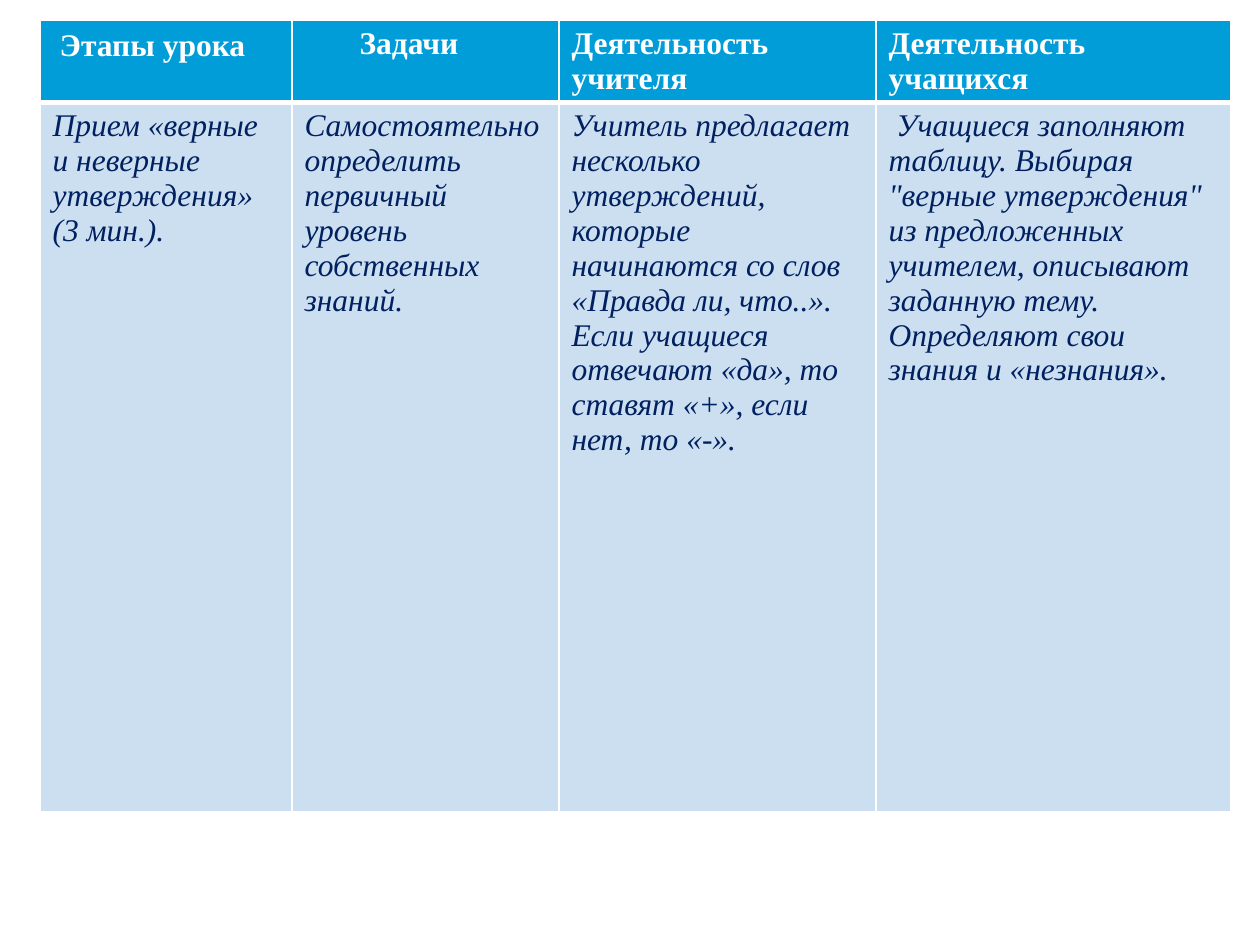
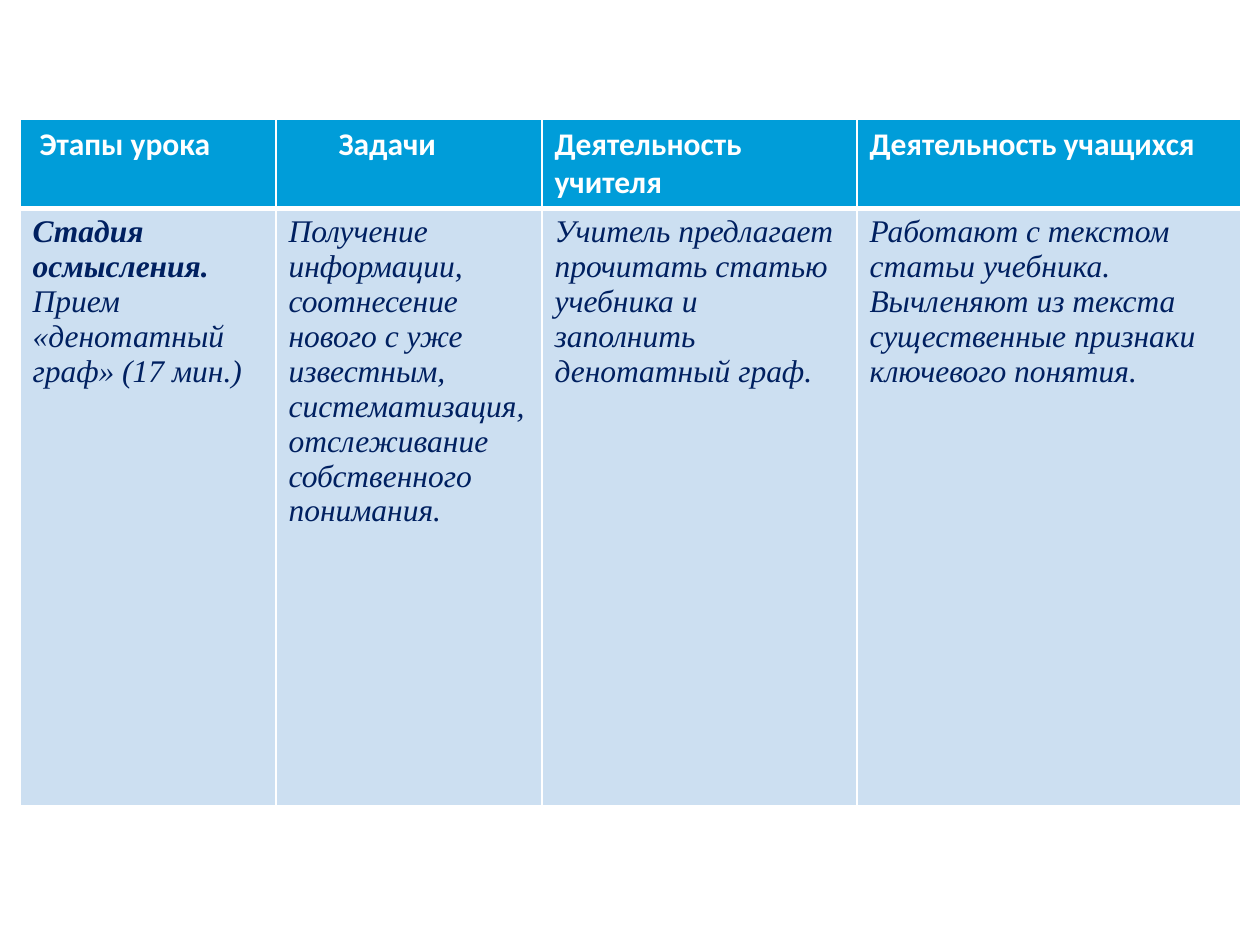
from lxml.etree import SubElement
from pptx import Presentation
from pptx.dml.color import RGBColor as Rgb
from pptx.oxml.ns import qn
from pptx.util import Emu, Pt

SCALE = 914400 / 126
COLORS = {"header": "009DD9", "body": "CCDFF1", "text": "002060", "white": "FFFFFF"}
SERIF, SANS = "Times New Roman", "Calibri"
HEADERS = ["Этапы урока", "Задачи", "Деятельность учителя", "Деятельность учащихся"]


def px(value):
    return Emu(round(value * SCALE))


class Deck:
    text_size = Pt(18)

    def __init__(self):
        self.presentation = Presentation()
        self.presentation.slide_width = px(1260)
        self.presentation.slide_height = px(945)
        self.slide = None

    def add_slide(self):
        self.slide = self.presentation.slides.add_slide(self.presentation.slide_layouts[6])

    def style_paragraph(self, paragraph, font_name, color, bold, italic):
        font = paragraph.font
        font.name, font.size = font_name, self.text_size
        font.bold, font.italic = bold, italic
        font.color.rgb = Rgb.from_string(COLORS[color])

    def style_cell(self, cell, fill, bottom_width):
        properties = cell._tc.get_or_add_tcPr()
        for side in "LRTB":
            width = bottom_width if side == "B" else 1
            line = SubElement(properties, qn(f"a:ln{side}"), w=str(Pt(width)))
            solid = SubElement(line, qn("a:solidFill"))
            SubElement(solid, qn("a:srgbClr"), val=COLORS["white"])
        cell.fill.solid()
        cell.fill.fore_color.rgb = Rgb.from_string(COLORS[fill])

    def header_cell(self, cell, text, font_name, indent):
        self.style_cell(cell, "header", 3)
        paragraph = cell.text_frame.paragraphs[0]
        if text == HEADERS[0]:
            lead = paragraph.add_run()
            lead.text = " "
            lead.font.name = SANS
        paragraph.add_run().text = text
        if text == HEADERS[1]:
            paragraph._p.get_or_add_pPr().set("indent", str(px(indent)))
        self.style_paragraph(paragraph, font_name, "white", True, False)

    def body_cell(self, cell, text, bold_title):
        self.style_cell(cell, "body", 1)
        cell.text = text
        for index, paragraph in enumerate(cell.text_frame.paragraphs):
            self.style_paragraph(paragraph, SERIF, "text", bold_title and index == 0, True)

    def lesson_table(self, left, top, widths, heights, header_font, indent, texts,
                     bold_title=False):
        frame = self.slide.shapes.add_table(
            2, len(widths), px(left), px(top), px(sum(widths)), px(sum(heights)))
        table = frame.table
        table.first_row = table.horz_banding = False
        for row, height in zip(table.rows, heights):
            row.height = px(height)
        for index, width in enumerate(widths):
            table.columns[index].width = px(width)
            self.header_cell(table.cell(0, index), HEADERS[index], header_font, indent)
            self.body_cell(table.cell(1, index), texts[index], bold_title and index == 0)


def main():
    deck = Deck()
    deck.add_slide()
    deck.lesson_table(40, 20, [252, 267, 317, 355], [82, 709], SERIF, 55, [
        "Прием «верные и неверные утверждения»\n(3 мин.).",
        "Самостоятельно определить первичный уровень собственных знаний.",
        "Учитель предлагает несколько утверждений, которые начинаются со слов "
        "«Правда ли, что..». Если учащиеся отвечают «да», то ставят «+», если нет, то «-».",
        " Учащиеся заполняют таблицу. Выбирая \"верные утверждения\" из предложенных "
        "учителем, описывают заданную тему. Определяют свои знания и «незнания».",
    ])
    deck.add_slide()
    deck.lesson_table(20, 119, [256, 266, 315, 384], [89, 597], SANS, 50, [
        "Стадия осмысления.\nПрием «денотатный граф» (17 мин.)",
        "Получение информации, соотнесение нового с уже известным, систематизация, "
        "отслеживание собственного понимания.",
        "Учитель предлагает прочитать статью учебника и заполнить денотатный граф.",
        "Работают с текстом статьи учебника. Вычленяют из текста существенные признаки "
        "ключевого понятия.",
    ], bold_title=True)
    deck.presentation.save("out.pptx")


if __name__ == "__main__":
    main()
